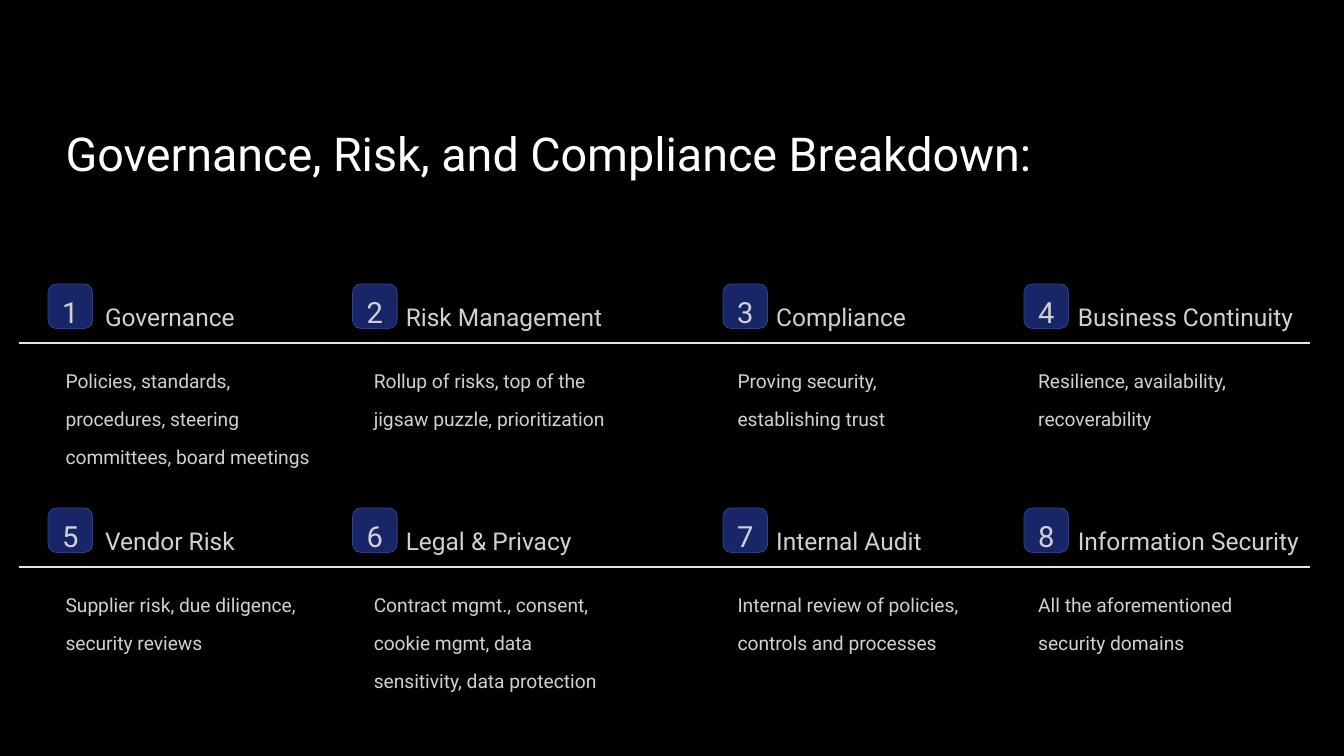
from dataclasses import dataclass

import pptx
import pptx.dml.color
import pptx.enum.shapes
import pptx.enum.text
import pptx.oxml
import pptx.oxml.ns
import pptx.shapes.base
import pptx.slide
import pptx.text.text
import pptx.util

Pt = pptx.util.Pt
PP_ALIGN = pptx.enum.text.PP_ALIGN
FONT = "Roboto"
COLORS = {
    "background": "000000",
    "title": "FFFFFF",
    "text": "CFD0D8",
    "badge": "182567",
    "outline": "313E80",
    "rule": "E7E6E6",
}
ROW_TOP = 243.4
ROW_PITCH = 192
BADGE_SIZE = 38.2


@dataclass(frozen=True)
class Column:
    badge: float
    heading: float
    body: float


@dataclass(frozen=True)
class Topic:
    heading: str
    body: str


COLUMNS = [
    Column(41.2, 90, 56.2),
    Column(302.2, 347.8, 320.4),
    Column(619.7, 665.3, 632.2),
    Column(877.7, 923.8, 889.9),
]
ROWS = [
    [
        Topic("Governance", "Policies, standards, procedures, steering committees, board meetings"),
        Topic("Risk Management", "Rollup of risks, top of the jigsaw puzzle, prioritization"),
        Topic("Compliance", "Proving security, establishing trust"),
        Topic("Business Continuity", "Resilience, availability, recoverability"),
    ],
    [
        Topic("Vendor Risk", "Supplier risk, due diligence, security reviews"),
        Topic("Legal & Privacy", "Contract mgmt., consent, cookie mgmt, data sensitivity, data protection"),
        Topic("Internal Audit", "Internal review of policies, controls and processes"),
        Topic("Information Security", "All the aforementioned security domains"),
    ],
]


def rgb(name: str) -> pptx.dml.color.RGBColor:
    return pptx.dml.color.RGBColor.from_string(COLORS[name])


def set_text(tf: pptx.text.text.TextFrame, text: str, size: float, color: str,
             spacing: float = 1, align: PP_ALIGN = PP_ALIGN.LEFT) -> None:
    tf.word_wrap = True
    tf.auto_size = pptx.enum.text.MSO_AUTO_SIZE.NONE
    tf.vertical_anchor = pptx.enum.text.MSO_ANCHOR.TOP
    tf.margin_left = tf.margin_top = tf.margin_right = tf.margin_bottom = 0
    tf.text = text
    p = tf.paragraphs[0]
    p.alignment = align
    p.line_spacing = spacing
    r = p.runs[0]
    r.font.name = FONT
    r.font.size = Pt(size)
    r.font.color.rgb = rgb(color)


def place(sp: pptx.shapes.base.BaseShape, left: float, top: float,
          width: float, height: float) -> None:
    sp.left, sp.top, sp.width, sp.height = Pt(left), Pt(top), Pt(width), Pt(height)


def add_text(s: pptx.slide.Slide, text: str, left: float, top: float, width: float,
             height: float, size: float, spacing: float) -> None:
    sp = s.shapes.add_textbox(Pt(left), Pt(top), Pt(width), Pt(height))
    set_text(sp.text_frame, text, size, "text", spacing)


def add_badge(s: pptx.slide.Slide, number: int, left: float, top: float) -> None:
    sp = s.shapes.add_shape(pptx.enum.shapes.MSO_SHAPE.ROUNDED_RECTANGLE,
                            Pt(left), Pt(top), Pt(BADGE_SIZE), Pt(BADGE_SIZE))
    sp.shadow.inherit = False
    sp.adjustments[0] = 0.19
    sp.fill.solid()
    sp.fill.fore_color.rgb = rgb("badge")
    sp.line.color.rgb = rgb("outline")
    sp.line.width = Pt(0.75)
    set_text(sp.text_frame, str(number), 25, "text", align=PP_ALIGN.CENTER)
    sp.text_frame.margin_top = Pt(6.5)


def add_rule(s: pptx.slide.Slide, y: float) -> None:
    rule = s.shapes.add_connector(pptx.enum.shapes.MSO_CONNECTOR.STRAIGHT,
                                  Pt(16), Pt(y), Pt(1123.2), Pt(y))
    rule.line.color.rgb = rgb("rule")
    rule.line.width = Pt(1.5)
    effects = pptx.oxml.parse_xml(f"<a:effectLst {pptx.oxml.ns.nsdecls('a')}/>")
    rule._element.spPr.append(effects)


def add_topic(s: pptx.slide.Slide, number: int, topic: Topic, column: Column, top: float) -> None:
    add_badge(s, number, column.badge, top)
    add_text(s, topic.heading, column.heading, top + 9.8, 226.8, 52.6, 21, 1.24)
    add_text(s, topic.body, column.body, top + 60.4, 211.7, 72, 16.5, 1.64)


def main() -> None:
    prs = pptx.Presentation()
    prs.slide_width, prs.slide_height = Pt(1152), Pt(648)
    s = prs.slides.add_slide(prs.slide_layouts.get_by_name("Title Only"))
    s.background.fill.solid()
    s.background.fill.fore_color.rgb = rgb("background")
    title = s.shapes.title
    place(title, 56.2, 95, 918, 100.8)
    set_text(title.text_frame, "Governance, Risk, and Compliance Breakdown:", 40, "title", 1.25)

    for i, topics in enumerate(ROWS):
        top = ROW_TOP + i * ROW_PITCH
        add_rule(s, top + 50.6)
        for j, (topic, column) in enumerate(zip(topics, COLUMNS)):
            add_topic(s, i * len(COLUMNS) + j + 1, topic, column, top)

    prs.save("out.pptx")


if __name__ == "__main__":
    main()
